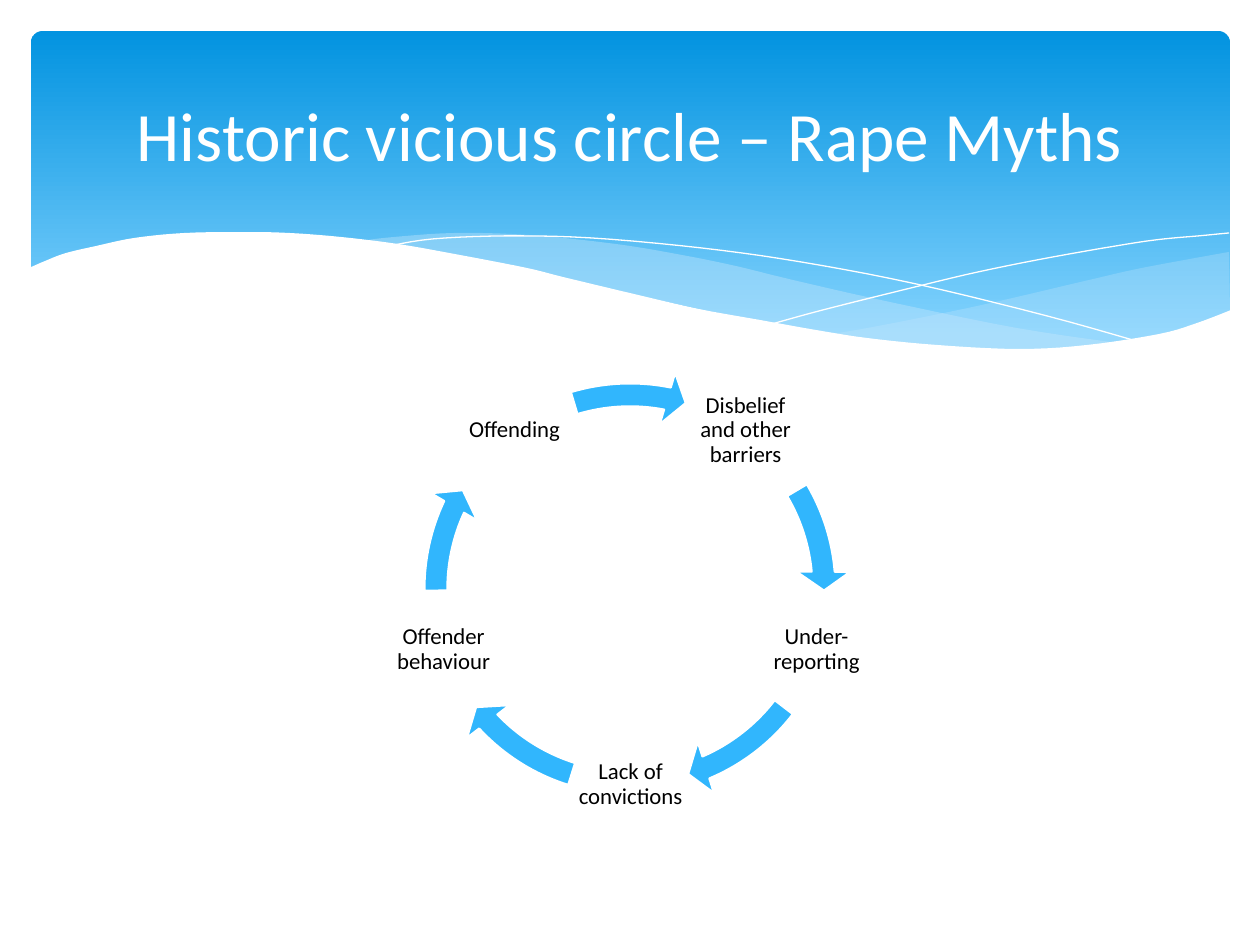
from math import cos, radians, sin

from lxml import etree
from pptx import Presentation
from pptx.dml.color import RGBColor
from pptx.enum.shapes import MSO_SHAPE as Preset
from pptx.enum.text import MSO_ANCHOR as Anchor, PP_ALIGN as Align
from pptx.oxml.ns import qn
from pptx.util import Emu, Pt

PX_PER_INCH = 126
COLORS = {
    "sky_top": "0293E0",
    "sky_bottom": "83D3FE",
    "wave": "C6E7FC",
    "arrow": "31B6FD",
    "white": "FFFFFF",
    "black": "000000",
}
FONT = "Calibri"

# Knots of the banner's curves, in px
RIGHT_WAVE_TOP = [(1229, 252), (1142, 268), (1085, 281), (982, 305), (889, 324), (833, 334)]
RIGHT_WAVE_BOTTOM = [(833, 334), (905, 343), (969, 348), (1026, 350), (1076, 348),
                     (1121, 342), (1160, 334), (1196, 324), (1230, 311)]
LONG_WAVE_TOP = [(1125, 344), (1017, 328), (890, 302), (793, 280), (736, 266), (682, 255),
                 (616, 244), (529, 235), (455, 233), (394, 237), (360, 241)]
LONG_WAVE_BOTTOM = [(360, 241), (456, 256), (566, 280), (668, 302), (757, 321),
                    (838, 335), (910, 345), (973, 350), (1031, 350), (1080, 349), (1125, 344)]
FALLING_LINE = [(389, 246), (433, 239), (505, 236), (591, 238), (701, 248),
                (801, 262), (916, 284), (1047, 316), (1143, 343)]
RISING_LINE = [(772, 324), (823, 310), (907, 289), (978, 272), (1053, 257),
               (1128, 244), (1164, 239), (1198, 236), (1229, 233)]
WHITE_EDGE = [(1231, 310), (1197, 323), (1159, 334), (1087, 345), (1019, 349), (937, 345),
              (867, 338), (816, 330), (760, 320), (699, 309), (634, 294), (563, 277),
              (527, 268), (460, 255), (398, 244), (341, 237), (290, 233), (243, 232),
              (184, 233), (134, 238), (96, 246), (66, 253), (45, 261), (29, 268)]

# Each step of the circle, with the start and end angle of the arrow after it
STEPS = [
    ("Disbelief and other barriers", 329.41, 354.92),
    ("Under-reporting", 37.53, 66.95),
    ("Lack of convictions", 107.47, 136.88),
    ("Offender behaviour", 179.49, 205),
    ("Offending", 253.28, 281.13),
]
CIRCLE_CENTER = (630, 589)
CIRCLE_RADIUS = 196
STEP_SIZE = 117
ARROW_SIZE = 442


def px(length):
    return Emu(round(length * 914400 / PX_PER_INCH))


def color(name):
    return RGBColor.from_string(COLORS[name])


def smooth(knots, steps=5):
    """Points of a Catmull-Rom curve through the knots."""
    padded = [knots[0], *knots, knots[-1]]
    points = [knots[0]]
    for a, b, c, d in zip(padded, padded[1:], padded[2:], padded[3:]):
        for step in range(1, steps + 1):
            t = step / steps
            points.append(tuple(
                (2 * q + (r - p) * t + (2 * p - 5 * q + 4 * r - s) * t ** 2
                 + (3 * q - p - 3 * r + s) * t ** 3) / 2
                for p, q, r, s in zip(a, b, c, d)))
    return points


def add_outline(page, points, closed):
    corners = [(px(x), px(y)) for x, y in points]
    builder = page.shapes.build_freeform(*corners[0], scale=1.0)
    builder.add_line_segments(corners[1:], close=closed)
    shape = builder.convert_to_shape()
    shape.shadow.inherit = False
    return shape


def add_wave(page, points, fill, opacity=100):
    wave = add_outline(page, points, True)
    wave.fill.solid()
    wave.fill.fore_color.rgb = color(fill)
    wave.line.fill.background()
    if opacity < 100:
        rgb = wave.fill._xPr.find(".//" + qn("a:srgbClr"))
        etree.SubElement(rgb, qn("a:alpha"), val=str(opacity * 1000))


def add_hairline(page, knots):
    line = add_outline(page, smooth(knots), False)
    line.fill.background()
    line.line.color.rgb = color("white")
    line.line.width = 0


def add_banner(page):
    sky = page.shapes.add_shape(Preset.ROUNDED_RECTANGLE, px(31), px(31), px(1199), px(340))
    sky.adjustments[0] = 0.034
    sky.shadow.inherit = False
    sky.line.fill.background()
    sky.fill.gradient()
    sky.fill.gradient_angle = 270
    stops = zip(sky.fill.gradient_stops, ("sky_top", "sky_bottom"), (0, 0.9))
    for stop, name, position in stops:
        stop.color.rgb = color(name)
        stop.position = position
    add_wave(page, smooth(RIGHT_WAVE_TOP) + smooth(RIGHT_WAVE_BOTTOM), "wave", 29)
    add_wave(page, smooth(LONG_WAVE_TOP) + smooth(LONG_WAVE_BOTTOM), "wave", 40)
    add_hairline(page, FALLING_LINE)
    add_hairline(page, RISING_LINE)
    add_wave(page, smooth(WHITE_EDGE) + [(29, 415), (1231, 415)], "white")


def add_text(page, text, left, top, width, height, size, name, inset, spacing):
    box = page.shapes.add_textbox(px(left), px(top), px(width), px(height))
    frame = box.text_frame
    frame.text = text
    frame.word_wrap = True
    frame.vertical_anchor = Anchor.MIDDLE
    frame.margin_left = frame.margin_right = px(inset)
    frame.margin_top = frame.margin_bottom = px(inset / 2 if inset > 2 else inset)
    para = frame.paragraphs[0]
    para.alignment = Align.CENTER
    para.line_spacing = spacing
    font = para.runs[0].font
    font.name = FONT
    font.size = Pt(size)
    font.color.rgb = color(name)


def add_arrow(page, start, end):
    center_x, center_y = CIRCLE_CENTER
    arrow = page.shapes.add_shape(
        Preset.CIRCULAR_ARROW, px(center_x - ARROW_SIZE // 2), px(center_y - ARROW_SIZE // 2),
        px(ARROW_SIZE), px(ARROW_SIZE))
    # Angles are stored as 60000ths of a degree, adjustments as 100000ths
    values = (0.052, 5.59 * 0.6, end * 0.6, start * 0.6, 0.061)
    for index, value in enumerate(values):
        arrow.adjustments[index] = value
    arrow.shadow.inherit = False
    arrow.fill.solid()
    arrow.fill.fore_color.rgb = color("arrow")
    arrow.line.color.rgb = color("white")
    arrow.line.width = Pt(1.25)


def add_circle(page):
    for index, (label, start, end) in enumerate(STEPS):
        angle = radians(index * 360 / len(STEPS) - 54)
        left = round(CIRCLE_CENTER[0] + CIRCLE_RADIUS * cos(angle) - STEP_SIZE / 2)
        top = round(CIRCLE_CENTER[1] + CIRCLE_RADIUS * sin(angle) - STEP_SIZE / 2)
        add_text(page, label, left, top, STEP_SIZE, STEP_SIZE, 13, "black", 2, 0.9)
        add_arrow(page, start, end)


def main():
    deck = Presentation()
    deck.slide_width, deck.slide_height = px(1260), px(945)
    page = deck.slides.add_slide(deck.slide_layouts[6])
    add_banner(page)
    add_circle(page)
    add_text(page, "Historic vicious circle – Rape Myths",
             63, 47, 1134, 173, 39.6, "white", 13, 1.0)
    deck.save("out.pptx")


if __name__ == "__main__":
    main()
